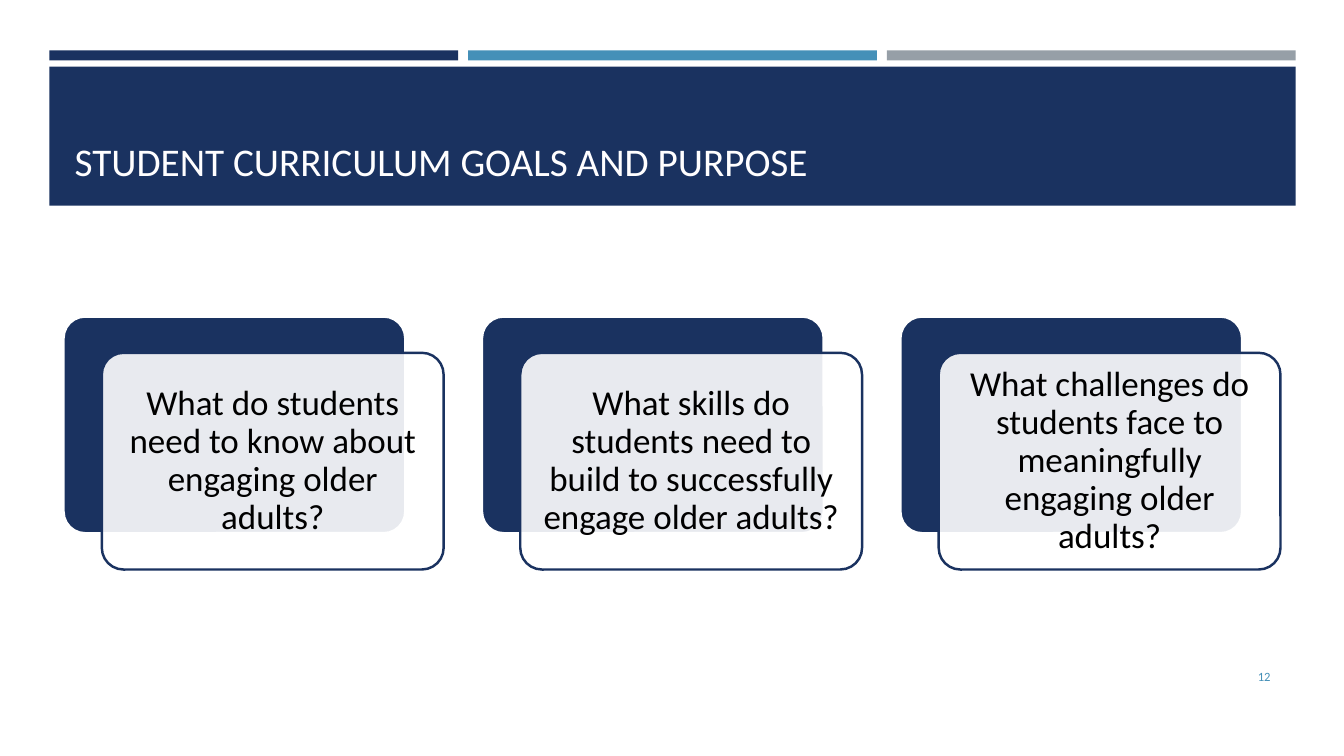
"""Build the slide on student curriculum goals and purpose."""
import lxml.etree
import pptx
import pptx.dml.color
import pptx.enum.shapes
import pptx.enum.text
import pptx.oxml.ns
import pptx.util

TITLE = "STUDENT CURRICULUM GOALS AND PURPOSE"
QUESTIONS = [
    "What do students need to know about engaging older adults?",
    "What skills do students need to build to successfully engage older adults?",
    "What challenges do students face to meaningfully engaging older adults?",
]
PAGE_NUMBER = "12"

NAVY, BLUE, GREY = "1A3260", "4590B8", "969FA7"
WHITE, TITLE_WHITE, BLACK = "FFFFFF", "FFFEFF", "000000"
STRIPES = [NAVY, BLUE, GREY]

SLIDE_SIZE = (13.33, 7.5)
BANNER = (0.49, 0.66, 12.36, 1.38)
TITLE_BOX = (0.64, 0.77, 12.06, 1.11)
NUMBER_BOX = (11.55, 6.51, 1.15, 0.4)
STRIPE_TOP, STRIPE_HEIGHT, STRIPE_GAP = 0.5, 0.1, 0.1
CARD_LEFT, CARD_TOP, CARD_STEP = 0.63, 3.14, 4.15
CARD_SIZE = (3.39, 2.15)
CARD_SHIFT = (0.38, 0.36)

SHAPE = pptx.enum.shapes.MSO_SHAPE
ALIGN = pptx.enum.text.PP_ALIGN
ANCHOR = pptx.enum.text.MSO_ANCHOR


def color(value):
    return pptx.dml.color.RGBColor.from_string(value)


def inches(values):
    return [pptx.util.Inches(value) for value in values]


def add_block(page, kind, place, fill, line=None, opacity=None):
    block = page.shapes.add_shape(kind, *inches(place))
    block.shadow.inherit = False
    block.fill.solid()
    block.fill.fore_color.rgb = color(fill)
    if opacity is not None:
        tint = block.element.xpath("./p:spPr/a:solidFill/a:srgbClr")[0]
        alpha = lxml.etree.SubElement(tint, pptx.oxml.ns.qn("a:alpha"))
        alpha.set("val", str(opacity * 1000))
    if line:
        block.line.color.rgb = color(line)
        block.line.width = pptx.util.Pt(1.75)
    else:
        block.line.fill.background()
    if kind == SHAPE.ROUNDED_RECTANGLE:
        block.adjustments[0] = 0.1
    return block


def write(box, text, size, tone, anchor, paragraph_format, margin=None):
    frame = box.text_frame
    frame.word_wrap = True
    frame.auto_size = pptx.enum.text.MSO_AUTO_SIZE.NONE
    frame.vertical_anchor = anchor
    if margin is not None:
        for side in ("left", "top", "right", "bottom"):
            setattr(frame, f"margin_{side}", pptx.util.Inches(margin))
    para = frame.paragraphs[0]
    for name, value in paragraph_format.items():
        setattr(para, name, value)
    span = para.add_run()
    span.text = text
    font_format = {"name": "Calibri", "size": pptx.util.Pt(size)}
    for name, value in font_format.items():
        setattr(span.font, name, value)
    span.font.color.rgb = color(tone)


def add_header(page):
    left, _, width, _ = BANNER
    add_block(page, SHAPE.RECTANGLE, BANNER, NAVY)
    stripe_width = (width - STRIPE_GAP * (len(STRIPES) - 1)) / len(STRIPES)
    for column, fill in enumerate(STRIPES):
        stripe_left = left + column * (stripe_width + STRIPE_GAP)
        place = (stripe_left, STRIPE_TOP, stripe_width, STRIPE_HEIGHT)
        add_block(page, SHAPE.RECTANGLE, place, fill)
    title = page.shapes.title
    title.left, title.top, title.width, title.height = inches(TITLE_BOX)
    write(title, TITLE, 28, TITLE_WHITE, ANCHOR.BOTTOM, {"alignment": ALIGN.LEFT})
    title.element.getparent().append(title.element)


def add_card(page, column, question):
    left = CARD_LEFT + column * CARD_STEP
    shift_x, shift_y = CARD_SHIFT
    back = (left, CARD_TOP, *CARD_SIZE)
    front = (left + shift_x, CARD_TOP + shift_y, *CARD_SIZE)
    add_block(page, SHAPE.ROUNDED_RECTANGLE, back, NAVY, WHITE)
    card = add_block(page, SHAPE.ROUNDED_RECTANGLE, front, WHITE, NAVY, 90)
    layout = {"alignment": ALIGN.CENTER, "line_spacing": 0.9}
    write(card, question, 25, BLACK, ANCHOR.MIDDLE, layout, 0.1)


def main():
    deck = pptx.Presentation()
    deck.slide_width, deck.slide_height = inches(SLIDE_SIZE)
    page = deck.slides.add_slide(deck.slide_layouts.get_by_name("Title Only"))
    add_header(page)
    for column, question in enumerate(QUESTIONS):
        add_card(page, column, question)
    number = page.shapes.add_textbox(*inches(NUMBER_BOX))
    layout = {"alignment": ALIGN.RIGHT, "space_after": pptx.util.Pt(6)}
    write(number, PAGE_NUMBER, 9, BLUE, ANCHOR.MIDDLE, layout)
    deck.save("out.pptx")


if __name__ == "__main__":
    main()
